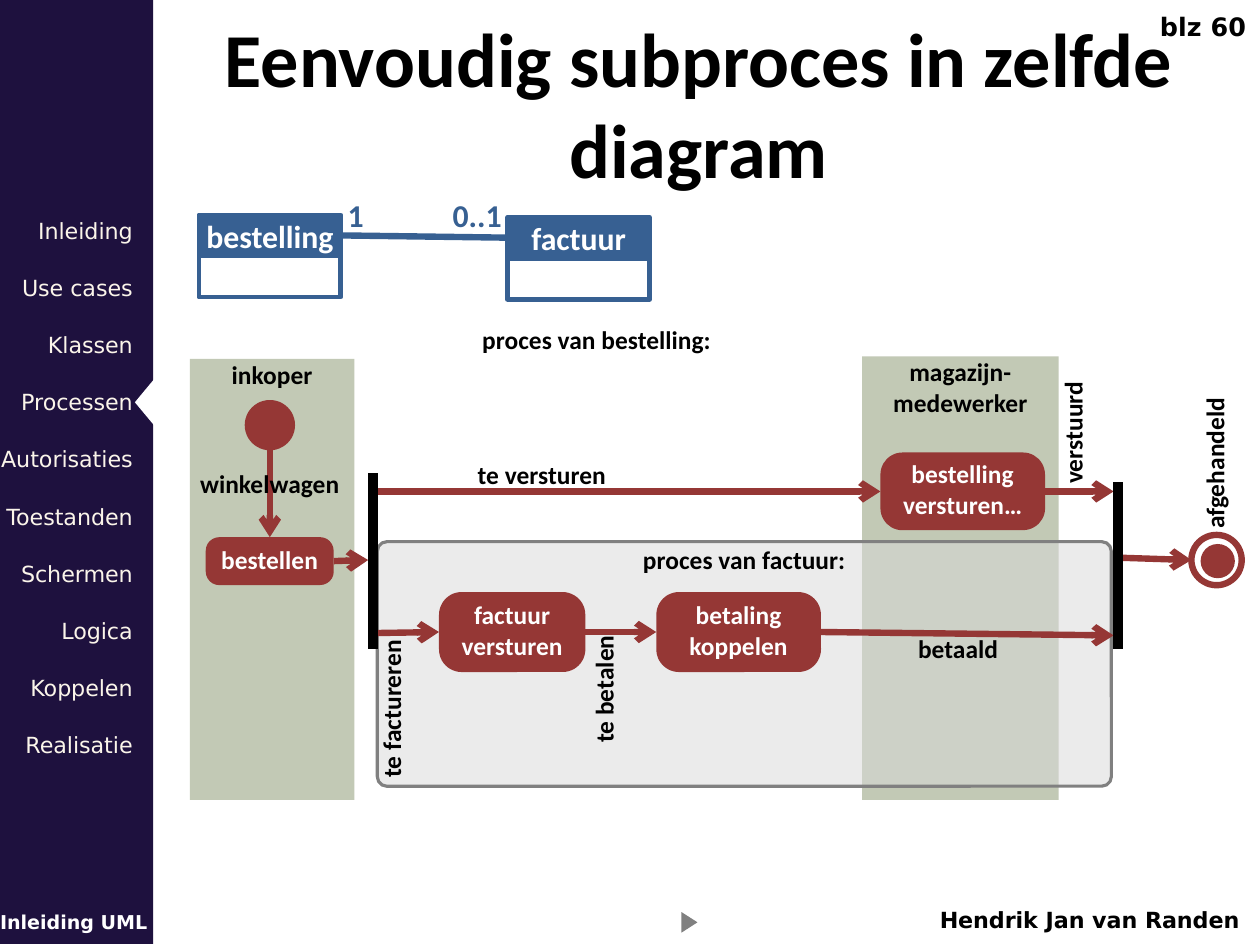
from dataclasses import dataclass
from typing import Any, Optional

from lxml.etree import SubElement
from pptx import Presentation
from pptx.dml.color import RGBColor
from pptx.enum.shapes import MSO_CONNECTOR, MSO_SHAPE as Preset
from pptx.enum.text import MSO_ANCHOR as Anchor, PP_ALIGN as Align
from pptx.oxml.ns import qn
from pptx.shapes.autoshape import Shape
from pptx.slide import Slide
from pptx.util import Inches, Pt

COLORS = {
    "navy": "1E113E", "cream": "FBF5EA", "white": "FFFFFF", "black": "000000",
    "olive": "4F6228", "light": "D9D9D9", "gray": "808080",
    "red": "953735", "blue": "376092",
}
SANS = "DejaVu Sans"
TOP, LEFT, BOTTOM, RIGHT = range(4)


@dataclass(frozen=True)
class TextStyle:
    size: float = 8
    color: str = "black"
    font: str = "Calibri"
    bold: bool = True
    align: Align = Align.CENTER
    anchor: Anchor = Anchor.MIDDLE
    margins: tuple[float, float, float, float] = (0, 0, 0, 0)
    wrap: bool = False
    upward: bool = False


@dataclass(frozen=True)
class Box:
    """A preset shape, or a text box when preset is None; lengths in inches."""
    left: float
    top: float
    width: float
    height: float
    text: str = ""
    style: TextStyle = TextStyle()
    preset: Optional[Preset] = None
    fill: Optional[str] = None
    opacity: int = 100
    line: Optional[str] = None
    weight: float = 1
    corner: Optional[float] = None
    rotation: float = 0


@dataclass(frozen=True)
class Link:
    start: tuple[float, float]
    end: tuple[float, float]
    color: str = "red"
    weight: float = 2
    arrow: bool = True
    source: Optional[tuple[str, int]] = None
    target: Optional[tuple[str, int]] = None


MENU = TextStyle(7, "cream", SANS, False, Align.RIGHT, Anchor.TOP, wrap=True)
FOOTER = TextStyle(7, font=SANS, align=Align.RIGHT, margins=(0, 0.05, 0, 0.05))
COURSE = TextStyle(6, "white", SANS, align=Align.LEFT, margins=(0, 0.05, 0, 0.05))
TITLE = TextStyle(24, anchor=Anchor.TOP, margins=(0.1, 0.05, 0.1, 0.05), wrap=True)
PAGE = TextStyle(font=SANS, align=Align.RIGHT, anchor=Anchor.TOP,
                 margins=(0.1, 0.05, 0.06, 0.05))
LANE = TextStyle(anchor=Anchor.TOP)
FRAME = TextStyle(anchor=Anchor.TOP, margins=(0, 0, 0, 0.04), wrap=True)
ACTION = TextStyle(color="white", margins=(0, 0.02, 0, 0.04), wrap=True)
CLASS_NAME = TextStyle(10, "white", wrap=True)
MULTIPLICITY = TextStyle(10, "blue", align=Align.LEFT)
CENTERED = TextStyle()
UPWARD = TextStyle(align=Align.RIGHT, upward=True)

MENU_ITEMS = ["Inleiding", "Use cases", "Klassen", "Processen", "Autorisaties",
              "Toestanden", "Schermen", "Logica", "Koppelen", "Realisatie"]


def lane(left: float, top: float, width: float, text: str) -> Box:
    return Box(left, top, width, 3.5 - top, text, LANE, Preset.RECTANGLE, "olive", 34)


def action(left: float, top: float, width: float, height: float, text: str) -> Box:
    return Box(left, top, width, height, text, ACTION, Preset.ROUNDED_RECTANGLE,
               "red", corner=0.284)


def class_part(left: float, top: float, fill: str, text: str = "") -> Box:
    return Box(left, top, 0.62, 0.18, text, CLASS_NAME, Preset.RECTANGLE, fill,
               line="blue", weight=1.5)


BACKDROP = [
    Box(0, 0, 0.67, 4.13, preset=Preset.RECTANGLE, fill="navy"),
    Box(3.46, 3.92, 1.96, 0.21, "Hendrik Jan van Randen", FOOTER),
    Box(0, 3.93, 0.72, 0.21, "Inleiding UML", COURSE),
    *(Box(-0.03, 0.95 + 0.25 * row, 0.61, 0.21, item, MENU)
      for row, item in enumerate(MENU_ITEMS)),
    Box(0.52, 1.71, 0.24, 0.1, preset=Preset.ISOSCELES_TRIANGLE, fill="white",
        rotation=270),
    Box(0.6, 0, 4.91, 0.56, "Eenvoudig subproces in zelfde diagram", TITLE),
    lane(3.77, 1.56, 0.86, "magazijn-\nmedewerker"),
    Box(1.65, 2.37, 3.21, 1.07, "proces van factuur:", FRAME,
        Preset.ROUNDED_RECTANGLE, "light", 50, "gray", 1, 0.039),
    lane(0.83, 1.57, 0.72, "inkoper"),
    Box(1.07, 1.75, 0.22, 0.22, preset=Preset.OVAL, fill="red"),
    Box(5.21, 2.34, 0.22, 0.22, preset=Preset.OVAL, line="red", weight=2),
    Box(5.25, 2.38, 0.15, 0.15, preset=Preset.OVAL, fill="red"),
    class_part(0.87, 1.12, "white"),
    class_part(2.22, 1.13, "white"),
    Box(2.97, 4, 0.09, 0.07, preset=Preset.ISOSCELES_TRIANGLE, fill="gray",
        rotation=90),
]
NODES = {
    "order": class_part(0.87, 0.94, "blue", "bestelling"),
    "invoice": class_part(2.22, 0.95, "blue", "factuur"),
    "place order": action(0.9, 2.35, 0.56, 0.21, "bestellen"),
    "ship order": action(3.85, 1.98, 0.72, 0.34, "bestelling\nversturen…"),
    "send invoice": action(1.92, 2.59, 0.64, 0.35, "factuur versturen"),
    "match payment": action(2.87, 2.59, 0.72, 0.35, "betaling koppelen"),
}
LINKS = [
    Link((1.18, 1.97), (1.18, 2.35), target=("place order", TOP)),
    Link((1.46, 2.45), (1.61, 2.45), source=("place order", RIGHT)),
    Link((1.63, 2.15), (3.85, 2.15), target=("ship order", LEFT)),
    Link((4.57, 2.15), (4.87, 2.15), source=("ship order", RIGHT)),
    Link((1.63, 2.77), (1.92, 2.77), target=("send invoice", LEFT)),
    Link((2.56, 2.77), (2.87, 2.77), source=("send invoice", RIGHT),
         target=("match payment", LEFT)),
    Link((3.59, 2.77), (4.87, 2.78), source=("match payment", RIGHT)),
    Link((4.89, 2.44), (5.21, 2.45)),
    Link((1.63, 2.07), (1.63, 2.84), "black", 3, False),
    Link((4.89, 2.11), (4.89, 2.84), "black", 3, False),
    Link((1.49, 1.03), (2.22, 1.04), "blue", 2, False,
         ("order", RIGHT), ("invoice", LEFT)),
]
LABELS = [
    Box(2.02, 1.99, 0.7, 0.17, "te versturen", CENTERED),
    Box(2.01, 1.4, 1.2, 0.17, "proces van bestelling:", CENTERED),
    Box(3.7, 2.75, 0.98, 0.17, "betaald", CENTERED),
    Box(2.56, 2.78, 0.16, 0.55, "te betalen", UPWARD),
    Box(1.63, 2.8, 0.16, 0.64, "te factureren", UPWARD),
    Box(4.61, 1.67, 0.16, 0.45, "verstuurd", UPWARD),
    Box(5.23, 1.74, 0.16, 0.57, "afgehandeld", UPWARD),
    Box(1.98, 0.85, 0.36, 0.18, "0..1", MULTIPLICITY),
    Box(1.52, 0.85, 0.27, 0.18, "1", MULTIPLICITY),
    Box(4.96, 0, 0.55, 0.24, "blz 60", PAGE),
    Box(0.83, 2.03, 0.7, 0.17, "winkelwagen", CENTERED),
]


def rgb(name: str) -> RGBColor:
    return RGBColor.from_string(COLORS[name])


def apply(target: Any, values: dict[str, Any]) -> None:
    for name, value in values.items():
        setattr(target, name, value)


def write_text(shape: Shape, text: str, style: TextStyle) -> None:
    frame = shape.text_frame
    sides = ("margin_left", "margin_top", "margin_right", "margin_bottom")
    apply(frame, {"text": text, "word_wrap": style.wrap, "vertical_anchor": style.anchor,
                  **{side: Inches(gap) for side, gap in zip(sides, style.margins)}})
    if style.upward:
        shape._element.txBody.bodyPr.set("vert", "vert270")
    for paragraph in frame.paragraphs:
        paragraph.alignment = style.align
        font = paragraph.runs[0].font
        apply(font, {"name": style.font, "size": Pt(style.size), "bold": style.bold})
        font.color.rgb = rgb(style.color)


def paint(shape: Shape, box: Box) -> None:
    shape.shadow.inherit = False
    shape.rotation = box.rotation
    if box.corner is not None:
        shape.adjustments[0] = box.corner
    if box.fill:
        shape.fill.solid()
        shape.fill.fore_color.rgb = rgb(box.fill)
        if box.opacity < 100:
            color = shape._element.spPr.find(qn("a:solidFill"))[0]
            SubElement(color, qn("a:alpha"), val=str(box.opacity * 1000))
    else:
        shape.fill.background()
    if box.line:
        shape.line.color.rgb = rgb(box.line)
        shape.line.width = Pt(box.weight)
    else:
        shape.line.fill.background()


def draw_box(slide: Slide, box: Box) -> Shape:
    bounds = [Inches(value) for value in (box.left, box.top, box.width, box.height)]
    if box.preset is None:
        shape = slide.shapes.add_textbox(*bounds)
    else:
        shape = slide.shapes.add_shape(box.preset, *bounds)
        paint(shape, box)
    if box.text:
        write_text(shape, box.text, box.style)
    return shape


def draw_link(slide: Slide, link: Link, nodes: dict[str, Shape]) -> None:
    ends = [Inches(value) for value in (*link.start, *link.end)]
    connector = slide.shapes.add_connector(MSO_CONNECTOR.STRAIGHT, *ends)
    for joint, connect in ((link.source, connector.begin_connect),
                           (link.target, connector.end_connect)):
        if joint:
            connect(nodes[joint[0]], joint[1])
    connector.line.color.rgb = rgb(link.color)
    connector.line.width = Pt(link.weight)
    properties = connector._element.spPr
    if link.arrow:
        SubElement(properties.find(qn("a:ln")), qn("a:tailEnd"), type="arrow")
    SubElement(properties, qn("a:effectLst"))


def main() -> None:
    presentation = Presentation()
    apply(presentation, {"slide_width": Inches(5.51), "slide_height": Inches(4.13)})
    slide = presentation.slides.add_slide(presentation.slide_layouts[6])
    for box in BACKDROP:
        draw_box(slide, box)
    nodes = {name: draw_box(slide, box) for name, box in NODES.items()}
    for link in LINKS:
        draw_link(slide, link, nodes)
    for box in LABELS:
        draw_box(slide, box)
    presentation.save("out.pptx")


if __name__ == "__main__":
    main()
